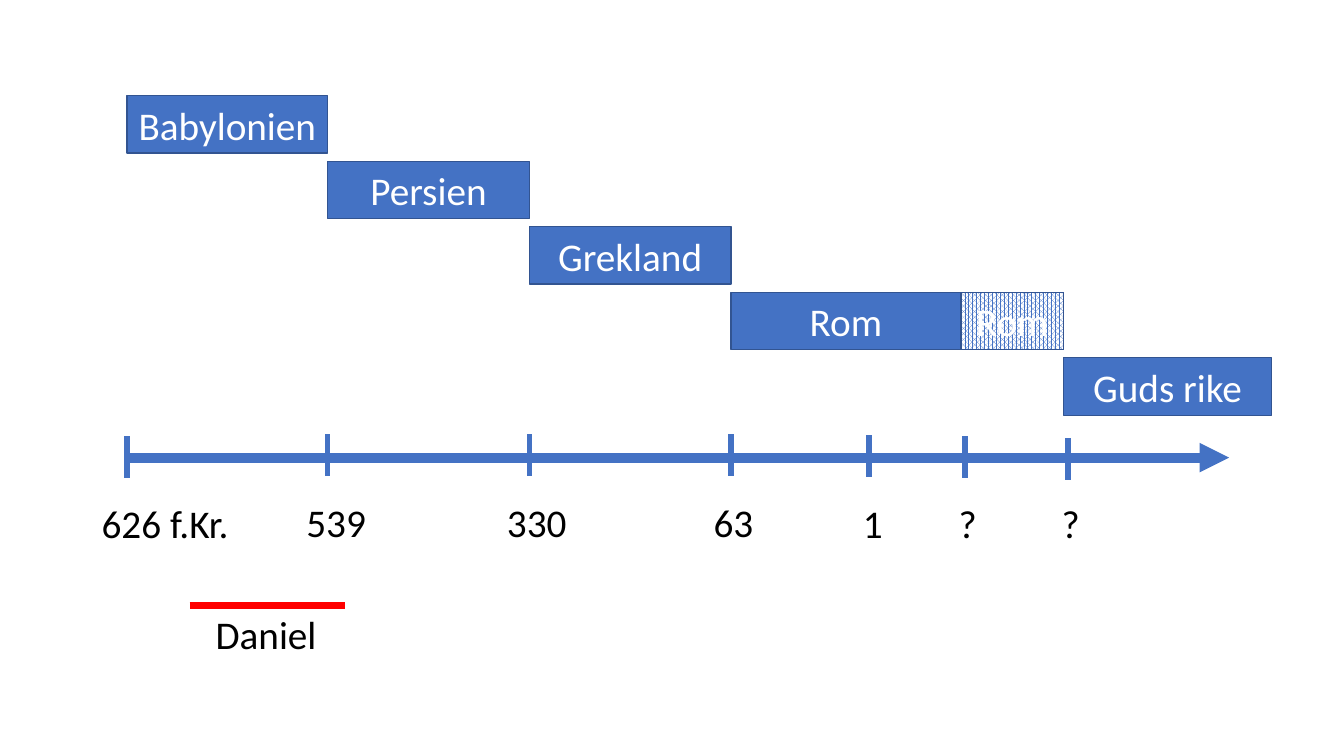
from dataclasses import dataclass

from lxml.etree import SubElement
from pptx import Presentation
from pptx.dml.color import RGBColor as RGB
from pptx.enum.dml import MSO_PATTERN as Pattern
from pptx.enum.shapes import MSO_CONNECTOR as Connector, MSO_SHAPE as Shape
from pptx.enum.text import MSO_ANCHOR as Anchor, MSO_AUTO_SIZE as AutoSize, PP_ALIGN as Align
from pptx.oxml.ns import qn
from pptx.util import Pt

PX = 9144  # EMU; 100 px to the inch


@dataclass(frozen=True)
class Theme:
    blue: RGB = RGB(0x44, 0x72, 0xC4)
    outline: RGB = RGB(0x32, 0x54, 0x91)
    red: RGB = RGB(0xFF, 0, 0)
    black: RGB = RGB(0, 0, 0)
    white: RGB = RGB(0xFF, 0xFF, 0xFF)
    font: str = "Calibri"
    size: int = 28


THEME = Theme()
BOX_H = 57
BAR_TOP, BAR_STEP = 95, 65
AXIS_Y, AXIS_END = 454, 1219
TICK_H = 41

# name, row, left, right, hatched
KINGDOMS = [
    ("Babylonien", 0, 126, 325, False),
    ("Persien", 1, 325, 525, False),
    ("Grekland", 2, 525, 725, False),
    ("Rom", 3, 725, 953, False),
    ("Rom", 3, 953, 1055, True),
    ("Guds rike", 4, 1055, 1261, False),
]

# label, tick x, tick top, label left, label top, label width
DATES = [
    ("626 f.Kr.", 126, 433, 91, 490, 148),
    ("539", 325, 431, 294, 489, 89),
    ("330", 525, 431, 493, 489, 80),
    ("63", 725, 431, 698, 489, 60),
    ("1", 862, 432, 846, 490, 40),
    ("?", 957, 433, 941, 490, 38),
    ("?", 1059, 435, 1043, 490, 38),
]


def px(*lengths):
    return [n * PX for n in lengths]


def write(tf, text, color=THEME.black, align=Align.LEFT, anchor=Anchor.TOP, wrap=False):
    tf.word_wrap = wrap
    tf.vertical_anchor = anchor
    p = tf.paragraphs[0]
    p.alignment = align
    r = p.add_run()
    r.text = text
    r.font.name = THEME.font
    r.font.size = Pt(THEME.size)
    r.font.color.rgb = color


def add_bar(s, name, row, left, right, hatched):
    top = BAR_TOP + row * BAR_STEP
    sp = s.shapes.add_shape(Shape.RECTANGLE, *px(left, top, right - left, BOX_H))
    sp.shadow.inherit = False
    if hatched:
        sp.fill.patterned()
        sp.fill.pattern = Pattern.PERCENT_75
        sp.fill.fore_color.rgb = THEME.blue
        sp.fill.back_color.rgb = THEME.white
    else:
        sp.fill.solid()
        sp.fill.fore_color.rgb = THEME.blue
    sp.line.color.rgb = THEME.outline
    sp.line.width = Pt(1)
    write(sp.text_frame, name, color=THEME.white, align=Align.CENTER,
          anchor=Anchor.MIDDLE, wrap=True)


def add_line(s, x1, y1, x2, y2, width, color=THEME.blue, arrow=False):
    line = s.shapes.add_connector(Connector.STRAIGHT, *px(x1, y1, x2, y2))
    line.line.color.rgb = color
    line.line.width = Pt(width)
    if arrow:
        SubElement(line.line._get_or_add_ln(), qn("a:tailEnd"), type="triangle")
    SubElement(line._element.spPr, qn("a:effectLst"))


def add_label(s, text, left, top, width):
    tf = s.shapes.add_textbox(*px(left, top, width, BOX_H)).text_frame
    write(tf, text)
    tf.auto_size = AutoSize.SHAPE_TO_FIT_TEXT


def main():
    prs = Presentation()
    prs.slide_width, prs.slide_height = px(1333, 750)
    s = prs.slides.add_slide(prs.slide_layouts[6])

    add_line(s, DATES[0][1], AXIS_Y, AXIS_END, AXIS_Y, width=7, arrow=True)
    for kingdom in KINGDOMS:
        add_bar(s, *kingdom)
    for text, x, tick_top, left, top, width in DATES:
        add_line(s, x, tick_top, x, tick_top + TICK_H, width=4)
        add_label(s, text, left, top, width)

    add_line(s, 188, 601, 342, 601, width=5, color=THEME.red)
    add_label(s, "Daniel", 204, 601, 121)
    prs.save("out.pptx")


if __name__ == "__main__":
    main()
